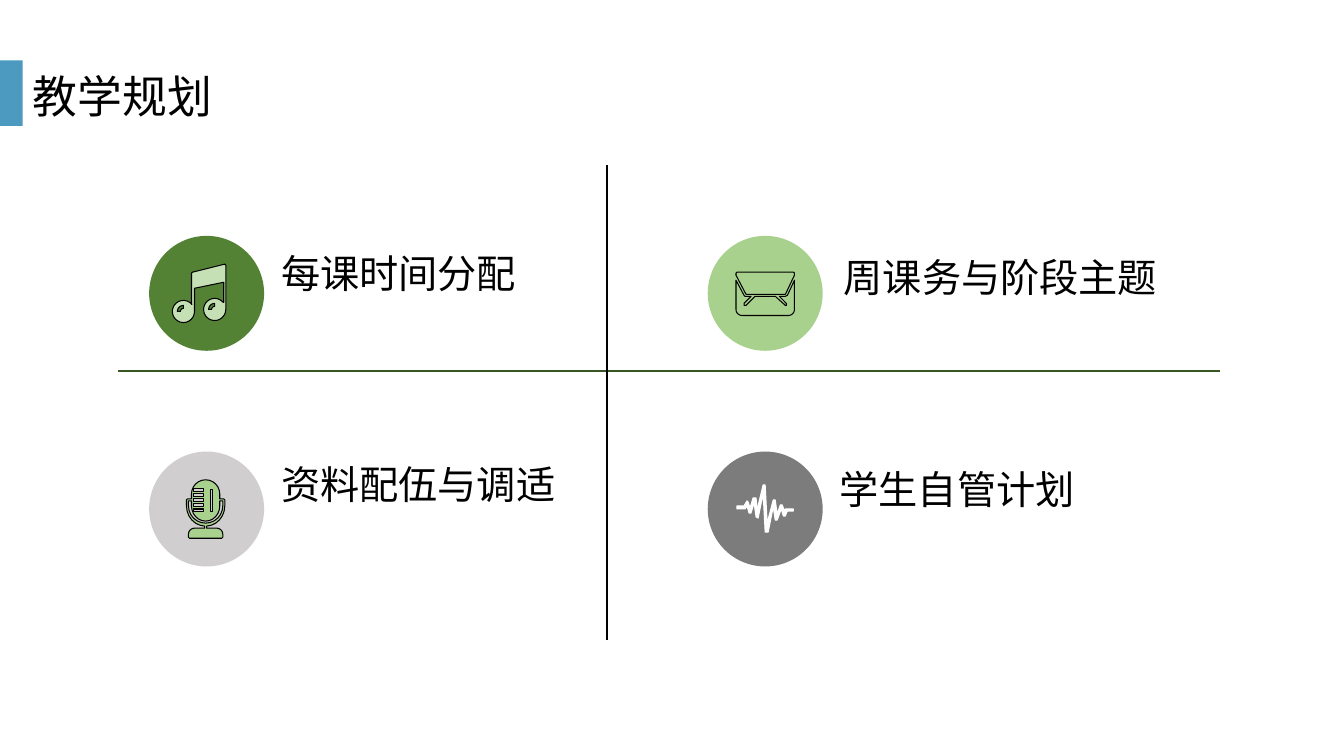
from math import cos, radians, sin

from lxml.etree import SubElement
from pptx import Presentation
from pptx.dml.color import RGBColor
from pptx.enum.shapes import MSO_CONNECTOR, MSO_SHAPE
from pptx.enum.text import MSO_ANCHOR, PP_ALIGN
from pptx.oxml.ns import qn
from pptx.util import Inches, Pt

WIDE, HIGH = Inches(13.33), Inches(7.5)
FONT = "Noto Sans CJK SC"
STEPS = 114
COLORS = {
    "ink": "000000", "white": "FFFFFF", "blue": "4C9ABF", "axis": "385723",
    "forest": "548235", "leaf": "A9D18E", "mint": "C5E0B4",
    "silver": "D0CECE", "slate": "7C7C7C",
}


def color(name):
    """Return the named colour."""
    return RGBColor.from_string(COLORS[name])


def share(left, top, wide, high):
    """Turn percentages of the slide into a box."""
    return [round(part * side / 100) for part, side in
            zip((left, top, wide, high), (WIDE, HIGH, WIDE, HIGH))]


def arc(x, y, across, down, start, end):
    """List points along an elliptic arc, angles in degrees."""
    count = max(4, round(abs(end - start) / 15))
    turns = [radians(start + (end - start) * i / count) for i in range(count + 1)]
    return [(x + across * cos(turn), y + down * sin(turn)) for turn in turns]


def rect(x, y, wide, high):
    """List the corners of a rectangle."""
    return [(x, y), (x + wide, y), (x + wide, y + high), (x, y + high)]


def shine(x, y):
    """Outline the highlight on a note head."""
    return arc(x, y, 6, 6, 180, 270) + arc(x, y, 3, 3, 270, 180)


def note():
    """Outline two joined music notes."""
    outer = [(76, 29), (75, 28), (43, 36), (42, 37), (42, 68),
             *arc(34, 75, 11, 11, -40, -360), (45, 52), (74, 46), (74, 66),
             *arc(65, 73, 11, 11, -40, -360)]
    return [[outer, shine(34, 75), shine(65, 73)]]


def mail():
    """Outline an envelope and its flap."""
    body = [(28, 44), (36, 59), (37, 60), (43, 60), (36, 67), (36, 69), (38, 69),
            (47, 60), (67, 60), (77, 69), (78, 69), (78, 67), (71, 60), (77, 60),
            (79, 59), (86, 44), *arc(80, 73, 6, 6, 0, 90), *arc(34, 73, 6, 6, 90, 180)]
    flap = [(28, 37), (29, 36), (85, 36), (86, 37), (86, 39), (77, 58), (38, 58), (28, 39)]
    return [[body], [flap]]


def mic():
    """Outline a desk microphone."""
    outer = [(75, 48), (74, 47), (70, 47), *arc(56, 42, 14, 14, 0, -180),
             (42, 47), (38, 47), (37, 48), *arc(56, 54, 19, 20, 180, 93),
             (55, 76), *arc(45, 82, 6, 6, -90, -180), (39, 85), (40, 86),
             (72, 86), (73, 85), *arc(67, 82, 6, 6, 0, -90), (57, 76),
             *arc(56, 54, 19, 20, 87, 0)]
    cradle = [*arc(56, 54, 17, 17, 180, 0), (73, 49), (70, 49),
              *arc(56, 54, 14, 15, 0, 180), (42, 49), (39, 49)]
    bars = [rect(44, 37 + 5 * row, 10, 2.5) for row in range(5)]
    return [[outer, cradle, rect(61, 38, 2, 21), *bars]]


def wave():
    """Outline a sound wave."""
    upper = [(29, 54), (36, 54), (39, 49), (40, 50), (42, 56), (45, 46), (48, 46),
             (49, 58), (55, 33), (57, 33), (59, 71), (65, 48), (67, 48), (69, 62),
             (72, 53), (74, 53), (76, 59), (77, 57), (85, 57)]
    lower = [(85, 59), (79, 59), (77, 64), (75, 64), (73, 57), (69, 68), (67, 68),
             (65, 55), (60, 80), (57, 80), (55, 42), (50, 66), (48, 65), (46, 51),
             (43, 61), (41, 61), (39, 54), (37, 57), (29, 57)]
    return [[upper + lower]]


def paint(shape, fill=None, line=None):
    """Set the fill and outline of a shape."""
    shape.shadow.inherit = False
    if fill:
        shape.fill.solid()
        shape.fill.fore_color.rgb = color(fill)
    else:
        shape.fill.background()
    if line:
        shape.line.color.rgb = color(line)
        shape.line.width = Pt(0.75)
    else:
        shape.line.fill.background()


def write(shape, text, size=28, tone="ink", space=1.0, anchor=MSO_ANCHOR.TOP):
    """Put formatted text into a shape."""
    frame = shape.text_frame
    frame.word_wrap = True
    frame.vertical_anchor = anchor
    para = frame.paragraphs[0]
    para.alignment = PP_ALIGN.LEFT
    para.line_spacing = space
    run = para.add_run()
    run.text = text
    run.font.size = Pt(size)
    run.font.name = FONT
    run.font.color.rgb = color(tone)
    SubElement(run.font._element, qn("a:ea")).set("typeface", FONT)


def trace(group, loops, place, fill, line):
    """Draw closed loops as one freeform."""
    spots = [[place(*point) for point in loop] for loop in loops]
    pen = group.shapes.build_freeform(*spots[0][0], scale=1.0)
    pen.add_line_segments(spots[0][1:], close=True)
    for loop in spots[1:]:
        pen.move_to(*loop[0])
        pen.add_line_segments(loop[1:], close=True)
    paint(pen.convert_to_shape(), fill, line)


def header(slide, box, text):
    """Place the side tab and the title in the box."""
    left, top, wide, high = box
    tab = round(wide * 0.1)
    paint(slide.shapes.add_shape(MSO_SHAPE.RECTANGLE, left, top, tab, high), "blue")
    title = slide.shapes.title
    title.left, title.top = left + tab, top + round(high * 0.03)
    title.width, title.height = wide - tab, high
    write(title, text, size=32, anchor=MSO_ANCHOR.MIDDLE)


def axis(slide, box, tone):
    """Draw a straight divider along the box."""
    left, top, wide, high = box
    line = slide.shapes.add_connector(
        MSO_CONNECTOR.STRAIGHT, left, top, left + wide, top + high)
    line.line.color.rgb = color(tone)
    line.line.width = Pt(1.5)
    SubElement(line._element.spPr, qn("a:effectLst"))


def topic(slide, box, text, shift, disc, icon, fill, line):
    """Place a disc, its icon and its label in the box."""
    left, top, wide, high = box
    step = high / STEPS

    def place(x, y):
        """Turn grid steps into a spot on the slide."""
        return round(left + x * step), round(top + y * step)

    group = slide.shapes.add_group_shape()
    paint(group.shapes.add_shape(MSO_SHAPE.OVAL, left, top, high, high), disc)
    for loops in icon():
        trace(group, loops, place, fill, line)
    label = group.shapes.add_textbox(*place(*shift), round(wide * 0.75), round(high * 0.7))
    write(label, text, space=1.5)


def main():
    """Build the slide and save it."""
    deck = Presentation()
    deck.slide_width, deck.slide_height = WIDE, HIGH
    slide = deck.slides.add_slide(deck.slide_layouts[5])
    header(slide, share(0, 8, 16.8, 8.67), "教学规划")
    axis(slide, share(8.78, 49.07, 82, 0), "axis")
    axis(slide, share(45.16, 21.87, 0, 62.8), "ink")
    topics = [
        ("每课时间分配", (121, -15), "forest", note, "mint", "ink"),
        ("周课务与阶段主题", (125, -11), "leaf", mail, None, "ink"),
        ("资料配伍与调适", (121, -20), "silver", mic, "leaf", "ink"),
        ("学生自管计划", (121, -15), "slate", wave, "white", "white"),
    ]
    for index, parts in enumerate(topics):
        row, col = divmod(index, 2)
        topic(slide, share(11.1 + 41.56 * col, 31.2 + 28.53 * row, 36.7, 15.2), *parts)
    deck.save("out.pptx")


if __name__ == "__main__":
    main()
